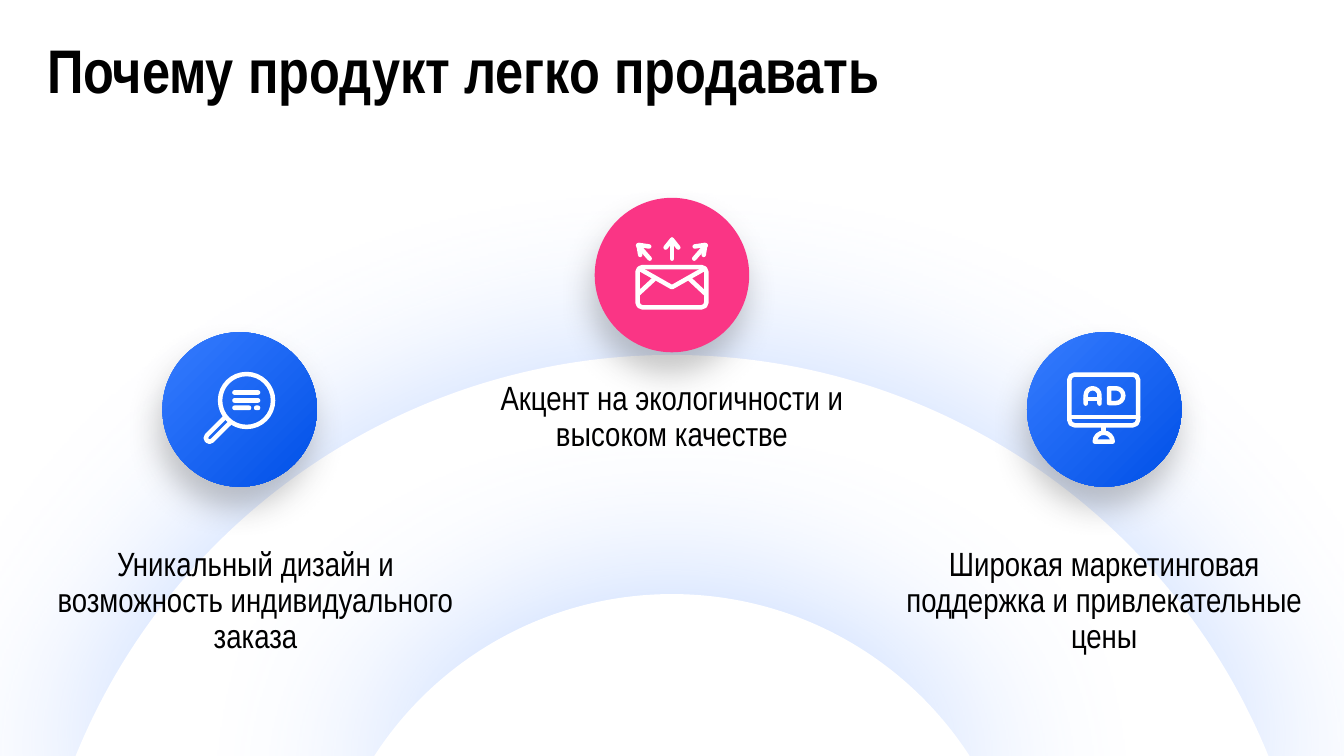
from dataclasses import dataclass
from math import acos, ceil, cos, degrees, radians, sin, tan

from lxml import etree
from pptx import Presentation
from pptx.dml.color import RGBColor
from pptx.enum.shapes import MSO_SHAPE
from pptx.enum.text import MSO_ANCHOR, MSO_AUTO_SIZE, PP_ALIGN
from pptx.oxml.ns import qn
from pptx.util import Cm, Pt

WHITE = RGBColor(0xFF, 0xFF, 0xFF)
BLACK = RGBColor(0x00, 0x00, 0x00)
PINK = RGBColor(0xFA, 0x35, 0x85)
SKY = RGBColor(0x36, 0x7C, 0xFF)
BLUE = RGBColor(0x00, 0x50, 0xE7)
GLOW = RGBColor(0x57, 0x91, 0xFF)
GREY = RGBColor(0x3F, 0x3F, 0x3F)

OVAL = MSO_SHAPE.OVAL
ROUND = MSO_SHAPE.ROUNDED_RECTANGLE
LEFT, CENTER = PP_ALIGN.LEFT, PP_ALIGN.CENTER

FONT = "Arial Narrow"
MID = 12.7
DISC = 2.92
STROKE = Pt(2.4)

Point = tuple[float, float]
Step = tuple[Point, ...]


@dataclass
class Shade:
    color: RGBColor
    alpha: int
    blur: int
    dist: int = 0
    angle: int = 0


@dataclass
class Dome:
    top: float
    radius: float
    shade: Shade


@dataclass
class Path:
    """Steps of one point are lines, of three points are curves."""
    steps: list[Step]
    closed: bool = False


@dataclass
class Bar:
    left: float
    right: float
    y: float


@dataclass
class Item:
    x: float
    y: float
    colors: list[RGBColor]
    icon: list[Bar | list[Path]]
    text: str
    top: float
    width: float
    shift: float = 0


def arc(x: float, y: float, radius: float, start: float, end: float) -> list[Step]:
    """Line to the start, then curves; angles run counterclockwise."""
    count = ceil(abs(end - start) / 90)
    turn = radians(end - start) / count
    pull = 4 / 3 * tan(turn / 4)
    steps: list[Step] = [((x + radius * cos(radians(start)),
                           y - radius * sin(radians(start))),)]
    for i in range(count):
        a = radians(start) + i * turn
        b = a + turn
        curve = [(cos(a) - pull * sin(a), sin(a) + pull * cos(a)),
                 (cos(b) + pull * sin(b), sin(b) - pull * cos(b)),
                 (cos(b), sin(b))]
        steps.append(tuple((x + radius * u, y - radius * v) for u, v in curve))
    return steps


def lines(*points: Point) -> list[Step]:
    return [(point,) for point in points]


def box(left: float, top: float, right: float, base: float, radius: float) -> Path:
    """Rectangle with round corners."""
    x, y = right - radius, base - radius
    u, v = left + radius, top + radius
    return Path(arc(u, v, radius, 180, 90) + arc(x, v, radius, 90, 0)
                + arc(x, y, radius, 0, -90) + arc(u, y, radius, -90, -180), True)


def mirror(path: Path) -> Path:
    return Path([tuple((-x, y) for x, y in step) for step in path.steps], path.closed)


def draw_paths(shapes, paths: list[Path], x: float = 0, y: float = 0):
    form = None
    for path in paths:
        spots = [(Cm(x + dx), Cm(y + dy)) for step in path.steps for dx, dy in step]
        if form is None:
            form = shapes.build_freeform(*spots[0])
        else:
            form.move_to(*spots[0])
        form.add_line_segments(spots[1:], close=path.closed)
    shape = form.convert_to_shape()
    nodes = iter(list(shape.element.iter(qn("a:lnTo"))))
    for path in paths:
        for step in path.steps[1:]:
            group = [next(nodes) for _ in step]
            if len(group) == 3:
                curve = etree.Element(qn("a:cubicBezTo"))
                group[0].addprevious(curve)
                for node in group:
                    curve.append(node[0])
                    node.getparent().remove(node)
    shape.shadow.inherit = False
    return shape


def paint(shape, color: RGBColor) -> None:
    shape.fill.solid()
    shape.fill.fore_color.rgb = color
    shape.line.fill.background()


def add_shade(shape, shade: Shade) -> None:
    shape.shadow.inherit = False
    effects = shape.element.spPr.find(qn("a:effectLst"))
    outer = etree.SubElement(
        effects, qn("a:outerShdw"), blurRad=str(Pt(shade.blur)),
        dist=str(Pt(shade.dist)), dir=str(shade.angle * 60000),
        algn="ctr", rotWithShape="0")
    color = etree.SubElement(outer, qn("a:srgbClr"), val=str(shade.color))
    etree.SubElement(color, qn("a:alpha"), val=str(shade.alpha * 1000))


def draw_dome(shapes, dome: Dome) -> None:
    base = 15.29
    y = dome.top + dome.radius
    edge = degrees(acos((y - base) / dome.radius))
    steps = arc(MID, y, dome.radius, 90 + edge, 90 - edge)
    shape = draw_paths(shapes, [Path(steps, True)])
    paint(shape, WHITE)
    add_shade(shape, dome.shade)


def draw_disc(shapes, item: Item) -> None:
    disc = shapes.add_shape(OVAL, Cm(item.x - DISC / 2), Cm(item.y - DISC / 2),
                            Cm(DISC), Cm(DISC))
    paint(disc, item.colors[0])
    if len(item.colors) > 1:
        disc.fill.gradient()
        disc.fill.gradient_angle = 315
        for i, color in enumerate(item.colors):
            stop = disc.fill.gradient_stops[i]
            stop.color.rgb = color
            stop.position = i
    add_shade(disc, Shade(GREY, 30, 17, 11, 101))


def draw_part(shapes, part: Bar | list[Path], x: float, y: float) -> None:
    if isinstance(part, Bar):
        thick = 0.09
        bar = shapes.add_shape(ROUND, Cm(x + part.left), Cm(y + part.y - thick / 2),
                               Cm(part.right - part.left), Cm(thick))
        bar.adjustments[0] = 0.5
        bar.shadow.inherit = False
        paint(bar, WHITE)
        return
    shape = draw_paths(shapes, part, x, y)
    shape.fill.background()
    shape.line.color.rgb = WHITE
    shape.line.width = STROKE
    line = shape.element.spPr.find(qn("a:ln"))
    line.set("cap", "rnd")
    etree.SubElement(line, qn("a:round"))


def write(frame, text: str, size: int, align, bold: bool = False) -> None:
    frame.word_wrap = True
    frame.auto_size = MSO_AUTO_SIZE.SHAPE_TO_FIT_TEXT
    para = frame.paragraphs[0]
    para.alignment = align
    para.line_spacing = 0.9
    run = para.add_run()
    run.text = text
    run.font.name = FONT
    run.font.size = Pt(size)
    run.font.bold = bold
    run.font.color.rgb = BLACK


def draw_label(shapes, item: Item) -> None:
    label = shapes.add_textbox(Cm(item.x + item.shift - item.width / 2), Cm(item.top),
                               Cm(item.width), Cm(1.4))
    frame = label.text_frame
    frame.margin_left = frame.margin_right = 0
    frame.margin_top = frame.margin_bottom = 0
    frame.vertical_anchor = MSO_ANCHOR.TOP
    write(frame, item.text, 18, CENTER)


LENS = Path(arc(0.13, -0.17, 0.5, 0, 360), True)
GRIP = Path(lines((-0.28, 0.15)) + arc(-0.57, 0.54, 0.07, 135, 315)
            + lines((-0.18, 0.25)))
SEARCH = [[LENS, GRIP], Bar(-0.14, 0.39, -0.17), Bar(-0.14, 0.39, -0.32),
          Bar(-0.14, 0.22, -0.03), Bar(0.27, 0.39, -0.03)]
FOLD = Path(lines((-0.63, 0.35), (-0.34, 0.08)))
RISE = [Path(lines((0, -0.67), (0, -0.31))),
        Path(lines((-0.12, -0.52), (0, -0.67), (0.12, -0.52)))]
SIDE = [Path(lines((-0.42, -0.31), (-0.64, -0.56))),
        Path(lines((-0.43, -0.54), (-0.63, -0.57), (-0.6, -0.38)))]
MAIL = [
    [box(-0.65, -0.15, 0.65, 0.61, 0.09), FOLD, mirror(FOLD),
     Path(lines((-0.6, -0.11), (0, 0.23), (0.6, -0.11)))],
    RISE, SIDE, [mirror(path) for path in SIDE],
]
SCREEN = [
    [box(-0.66, -0.66, 0.64, 0.3, 0.1),
     Path(lines((-0.66, 0.14), (0.64, 0.14))),
     Path(lines((-0.01, 0.3), (-0.01, 0.43))),
     Path(arc(-0.01, 0.61, 0.17, 180, 0), True)],
    [Path(lines((-0.35, -0.11)) + arc(-0.22, -0.27, 0.13, 180, 0)
          + lines((-0.09, -0.11))),
     Path(lines((-0.35, -0.2), (-0.09, -0.2)))],
    [Path(lines((0.09, -0.4)) + arc(0.22, -0.26, 0.14, 90, -90)
          + lines((0.09, -0.12)), True)],
]
DOMES = [Dome(6.71, 12.17, Shade(GLOW, 35, 100)),
         Dome(11.23, 6.7, Shade(GLOW, 40, 100))]
STEP = 8.17
ITEMS = [
    Item(MID - STEP, 7.74, [SKY, BLUE], SEARCH,
         "Уникальный дизайн и возможность индивидуального заказа", 10.34, 8.25, 0.3),
    Item(MID, 5.2, [PINK], MAIL,
         "Акцент на экологичности и высоком качестве", 7.21, 6.88),
    Item(MID + STEP, 7.74, [SKY, BLUE], SCREEN,
         "Широкая маркетинговая поддержка и привлекательные цены", 10.34, 8.25),
]


def main() -> None:
    deck = Presentation()
    deck.slide_width, deck.slide_height = Cm(25.4), Cm(14.29)
    shapes = deck.slides.add_slide(deck.slide_layouts[5]).shapes
    title = shapes.title
    title.left, title.top = Cm(0.71), Cm(0.66)
    title.width, title.height = Cm(21.89), Cm(1.47)
    frame = title.text_frame
    frame.margin_left = frame.margin_right = Cm(0.18)
    frame.margin_top = frame.margin_bottom = Cm(0.1)
    write(frame, "Почему продукт легко продавать", 33, LEFT, True)
    for dome in DOMES:
        draw_dome(shapes, dome)
    for item in ITEMS:
        draw_label(shapes, item)
    for item in ITEMS:
        draw_disc(shapes, item)
    for item in ITEMS:
        group = shapes.add_group_shape()
        for part in item.icon:
            draw_part(group.shapes, part, item.x, item.y)
    deck.save("out.pptx")


if __name__ == "__main__":
    main()
